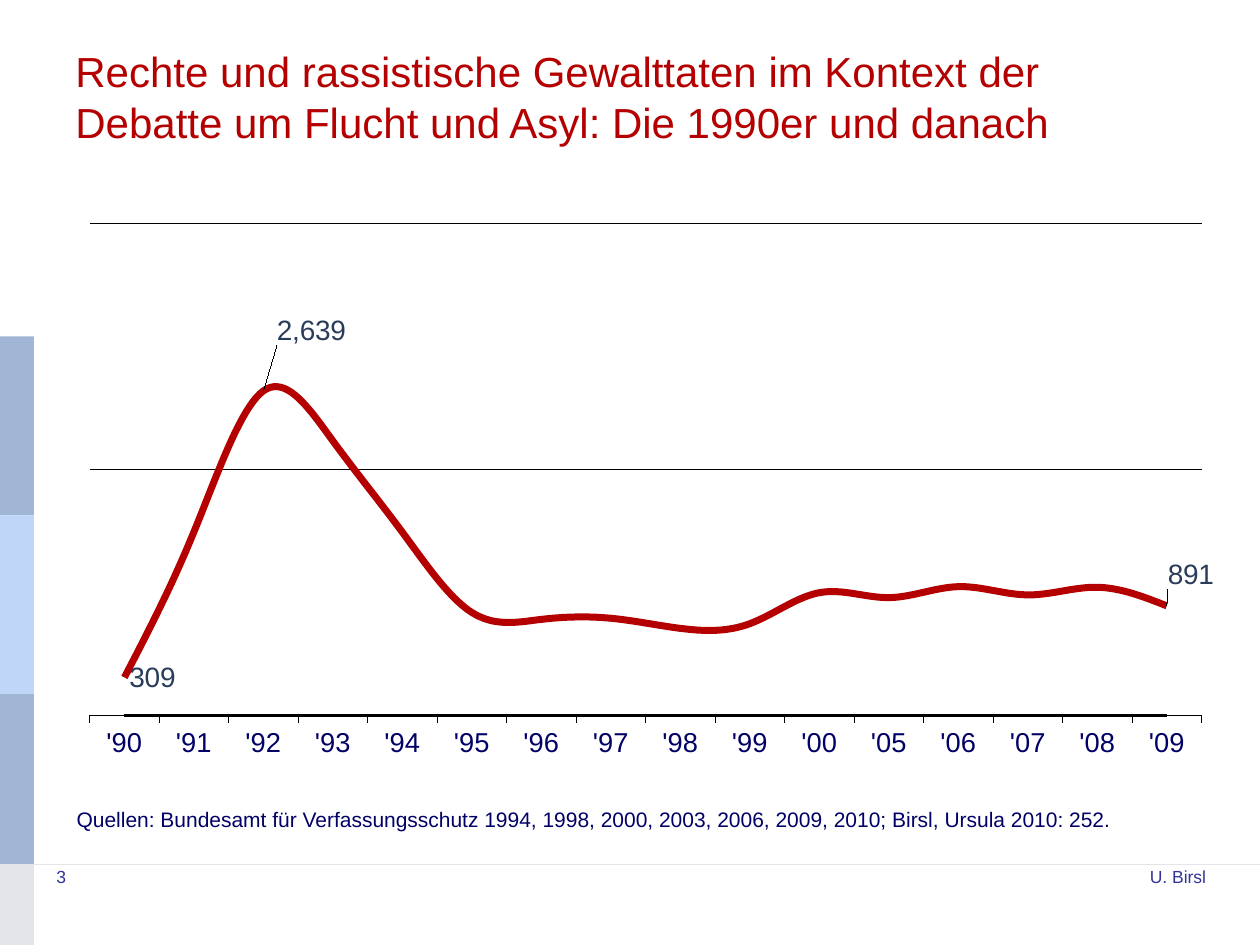
"""Build a slide with a line chart of right-wing violence from 1990 to 2009."""
from itertools import pairwise

from pptx import Presentation
from pptx.chart.data import CategoryChartData
from pptx.dml.color import RGBColor
from pptx.enum.chart import XL_CHART_TYPE, XL_LABEL_POSITION, XL_TICK_MARK
from pptx.enum.shapes import MSO_CONNECTOR, MSO_SHAPE
from pptx.enum.text import MSO_ANCHOR, PP_ALIGN
from pptx.oxml import parse_xml
from pptx.oxml.ns import nsdecls, qn
from pptx.util import Pt

TOP, MIDDLE = MSO_ANCHOR.TOP, MSO_ANCHOR.MIDDLE
LEFT, RIGHT = PP_ALIGN.LEFT, PP_ALIGN.RIGHT
ABOVE, BESIDE = XL_LABEL_POSITION.ABOVE, XL_LABEL_POSITION.RIGHT
NONE, OUTSIDE = XL_TICK_MARK.NONE, XL_TICK_MARK.OUTSIDE

FONT = "Arial"
WIDTH, HEIGHT = 720, 540
BAND_WIDTH = 19.44
BAND_EDGES = [192.24, 294.48, 396.72, 493.92, HEIGHT]
BAND_COLORS = ["A1B6D4", "BFD6F8", "A1B6D4", "E4E5EA"]
FOOTER_RULE = "E4E5EA"

TEXTS = [
    ("Rechte und rassistische Gewalttaten im Kontext der Debatte um Flucht und Asyl: "
     "Die 1990er und danach", (36, 21.6, 648, 66.96), 24, "B40000", MIDDLE, LEFT),
    ("U. Birsl", (468, 491.04, 228.24, 37.44), 10, "333399", TOP, RIGHT),
    ("3", (25.2, 491.04, 167.76, 37.44), 10, "333399", TOP, LEFT),
    ("Quellen: Bundesamt für Verfassungsschutz 1994, 1998, 2000, 2003, 2006, 2009, 2010; "
     "Birsl, Ursula 2010: 252.", (36.72, 445.68, 648, 45.36), 12, "000066", MIDDLE, LEFT),
]

CHART_BOX = (25.2, 114.48, 685.44, 331.2)
PLOT_AREA = {"layoutTarget": "inner", "xMode": "edge", "yMode": "edge",
             "x": 0.038, "y": 0.04, "w": 0.927, "h": 0.849}
YEARS = ["'90", "'91", "'92", "'93", "'94", "'95", "'96", "'97",
         "'98", "'99", "'00", "'05", "'06", "'07", "'08", "'09"]
SERIES = [
    ("Series 1", [0], "000000", 1.52),
    ("Series 2", [309, 1492, 2639, 2232, 1489, 837, 781, 790,
                  708, 746, 998, 958, 1047, 980, 1042, 891], "B40000", 4),
]
POINT_LABELS = [(0, BESIDE, 0, 0), (2, ABOVE, 0.04, -0.07), (15, ABOVE, 0.02, -0.02)]


def color(value):
    return RGBColor.from_string(value)


def points(values):
    return [Pt(value) for value in values]


def style_font(font, size, value):
    for name, setting in {"name": FONT, "size": Pt(size), "bold": False}.items():
        setattr(font, name, setting)
    font.color.rgb = color(value)


def style_line(line, value, width):
    line.color.rgb = color(value)
    line.width = Pt(width)


def layout(settings):
    parts = "".join(f'<c:{key} val="{value}"/>' for key, value in settings.items())
    return parse_xml(f'<c:layout {nsdecls("c")}><c:manualLayout>{parts}'
                     '</c:manualLayout></c:layout>')


def add_bands(slide):
    for (top, bottom), fill in zip(pairwise(BAND_EDGES), BAND_COLORS):
        band = slide.shapes.add_shape(
            MSO_SHAPE.RECTANGLE, *points((0, top, BAND_WIDTH, bottom - top)))
        band.shadow.inherit = False
        band.fill.solid()
        band.fill.fore_color.rgb = color(fill)
        band.line.fill.background()
    rule_y = BAND_EDGES[-2]
    rule = slide.shapes.add_connector(
        MSO_CONNECTOR.STRAIGHT, *points((0, rule_y, WIDTH, rule_y)))
    style_line(rule.line, FOOTER_RULE, 0.5)
    rule._element.spPr.append(parse_xml(f'<a:effectLst {nsdecls("a")}/>'))


def add_text(slide, wording, box, size, value, anchor, alignment):
    frame = slide.shapes.add_textbox(*points(box)).text_frame
    frame.word_wrap = True
    frame.vertical_anchor = anchor
    paragraph = frame.paragraphs[0]
    paragraph.alignment = alignment
    run = paragraph.add_run()
    run.text = wording
    style_font(run.font, size, value)


def add_point_labels(series):
    series.data_labels.show_value = False
    for index, position, dx, dy in POINT_LABELS:
        label = series.points[index].data_label
        style_font(label.font, 16, "293C59")
        label.position = position
        element = series.data_labels._element.findall(qn("c:dLbl"))[-1]
        fill = parse_xml(f'<c:spPr {nsdecls("c", "a")}><a:solidFill>'
                         '<a:srgbClr val="FFFFFF"/></a:solidFill></c:spPr>')
        element.find(qn("c:idx")).addnext(fill)
        if dx or dy:
            fill.addprevious(layout({"x": dx, "y": dy}))


def add_violence_chart(slide):
    data = CategoryChartData(number_format="#,##0")
    data.categories = YEARS
    for name, values, _, _ in SERIES:
        data.add_series(name, values)
    chart = slide.shapes.add_chart(XL_CHART_TYPE.LINE, *points(CHART_BOX), data).chart
    chart.has_title = chart.has_legend = False
    style_font(chart.font, 18.3, "000000")

    years = chart.category_axis
    years.major_tick_mark = OUTSIDE
    years.minor_tick_mark = NONE
    style_font(years.tick_labels.font, 15.6, "000066")
    style_line(years.format.line, "000000", 0.38)

    cases = chart.value_axis
    scale = {"minimum_scale": 0, "maximum_scale": 4000, "major_unit": 2000,
             "has_major_gridlines": True, "visible": False}
    for name, setting in scale.items():
        setattr(cases, name, setting)
    style_line(cases.major_gridlines.format.line, "000000", 0.38)

    plot = chart.plots[0]
    plot.vary_by_categories = False
    for series, (_, _, value, width) in zip(plot.series, SERIES):
        series.smooth = True
        style_line(series.format.line, value, width)
    add_point_labels(plot.series[1])

    chart_xml = chart._chartSpace.chart
    chart_xml.find(qn("c:dispBlanksAs")).set("val", "zero")
    area = chart_xml.plotArea
    for old in area.findall(qn("c:layout")):
        area.remove(old)
    area.insert(0, layout(PLOT_AREA))


def main():
    deck = Presentation()
    deck.slide_width, deck.slide_height = points((WIDTH, HEIGHT))
    slide = deck.slides.add_slide(deck.slide_layouts[6])
    add_bands(slide)
    add_violence_chart(slide)
    for text in TEXTS:
        add_text(slide, *text)
    deck.save("out.pptx")


if __name__ == "__main__":
    main()
